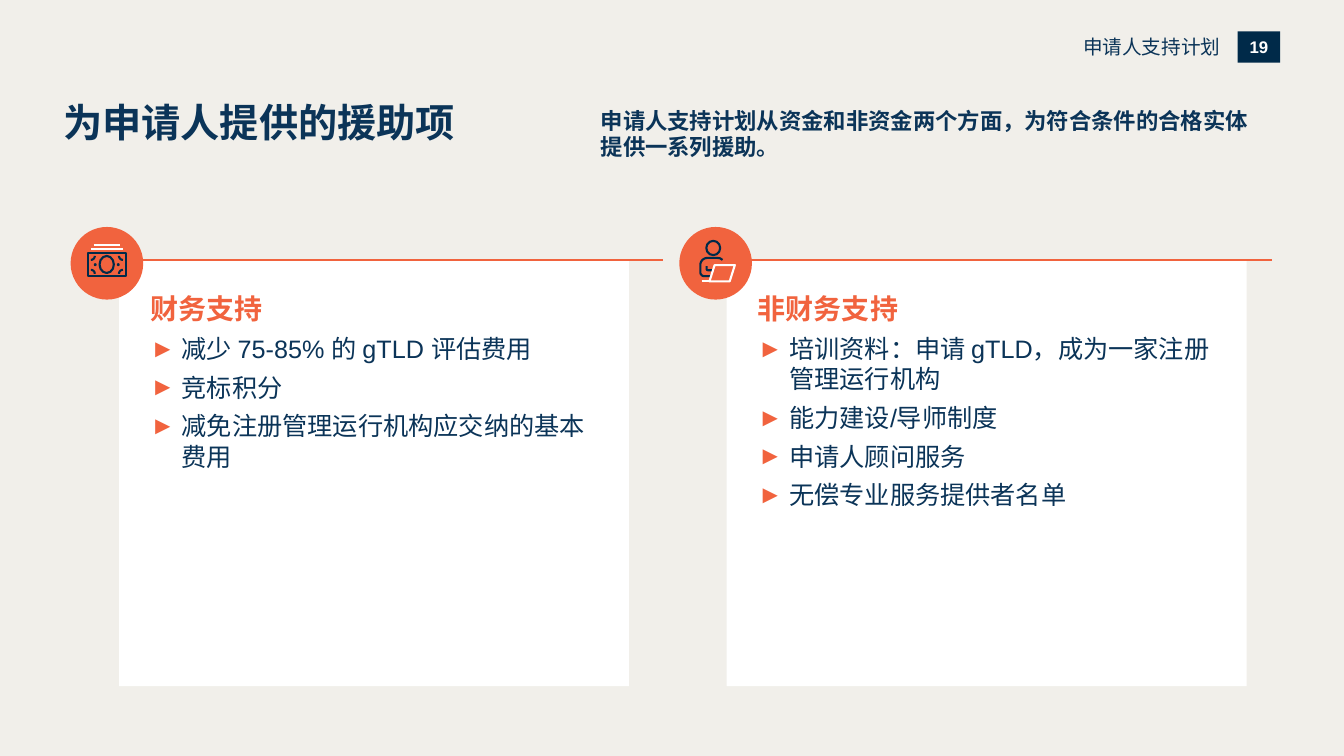
from dataclasses import dataclass
from math import cos, radians, sin

from lxml import etree
from pptx import Presentation
from pptx.dml.color import RGBColor
from pptx.enum import lang, shapes, text
from pptx.oxml import ns
from pptx.util import Cm, Pt


@dataclass(frozen=True)
class Theme:
    font: str = "Arial"
    paper: str = "F1EFEA"
    white: str = "FFFFFF"
    navy: str = "0B3458"
    dark: str = "002A49"
    orange: str = "F1633E"
    title: int = 28
    heading: int = 20
    bullet: int = 18
    lead: int = 16
    header: int = 14
    number: int = 12
    stroke: float = 1.5
    rule: float = 1.25


THEME = Theme()

# Lengths are centimetres; boxes are (left, top, width, height).
LABELS = [
    ("为申请人提供的援助项", (1.6, 2.49, 13.11, 2.34), dict(size=THEME.title, bold=True)),
    ("申请人支持计划从资金和非资金两个方面，为符合条件的合格实体提供一系列援助。",
     (15.14, 2.69, 16.74, 1.37), dict(size=THEME.lead, bold=True)),
    ("申请人支持计划", (18.49, 0.89, 12.27, 0.61),
     dict(size=THEME.header, align=text.PP_ALIGN.RIGHT)),
]
PAGE_NUMBER = ("19", (31.19, 0.79, 1.07, 0.79))
CARD_TOP, CARD_HEIGHT, CARD_INSET = 6.55, 10.74, 0.79
BADGE_TOP, BADGE_SIZE = 5.72, 1.83
CARDS = [
    dict(heading="非财务支持", left=18.31, width=13.11, right_inset=0.89,
         rule=(18.31, 32.05), badge=17.12,
         bullets=["培训资料：申请 gTLD，成为一家注册管理运行机构", "能力建设/导师制度",
                  "申请人顾问服务", "无偿专业服务提供者名单"]),
    dict(heading="财务支持", left=3.0, width=12.85, right_inset=0.61,
         rule=(2.95, 16.71), badge=1.78,
         bullets=["减少 75-85% 的 gTLD 评估费用", "竞标积分",
                  "减免注册管理运行机构应交纳的基本费用"]),
]

deck = Presentation()
deck.slide_width, deck.slide_height = Cm(33.87), Cm(19.05)
page = deck.slides.add_slide(deck.slide_layouts[6])


def color(code):
    return RGBColor.from_string(code)


def add_bullet(para):
    """Hang an orange arrowhead in front of the paragraph."""
    properties = para._p.get_or_add_pPr()
    properties.set("marL", str(Cm(0.79)))
    properties.set("indent", str(-Cm(0.89)))
    bullet_color = etree.SubElement(properties, ns.qn("a:buClr"))
    etree.SubElement(bullet_color, ns.qn("a:srgbClr"), val=THEME.orange)
    etree.SubElement(properties, ns.qn("a:buFont"), typeface=THEME.font)
    etree.SubElement(properties, ns.qn("a:buChar"), char="►")


def write(frame, words, size, ink=THEME.navy, bold=False, align=text.PP_ALIGN.LEFT,
          bullet=False, first=True):
    para = frame.paragraphs[0] if first else frame.add_paragraph()
    para.alignment = align
    if bullet:
        para.space_before = Pt(6)
        add_bullet(para)
    span = para.add_run()
    span.text = words
    span.font.name, span.font.size, span.font.bold = THEME.font, Pt(size), bold
    span.font.color.rgb = color(ink)
    span.font.language_id = lang.MSO_LANGUAGE_ID.SIMPLIFIED_CHINESE


def set_frame(box, insets=(0, 0, 0, 0), anchor=text.MSO_ANCHOR.TOP):
    frame = box.text_frame
    frame.word_wrap = True
    frame.vertical_anchor = anchor
    (frame.margin_left, frame.margin_top,
     frame.margin_right, frame.margin_bottom) = map(Cm, insets)
    return frame


def paint(shape, fill=None, line=None):
    shape.shadow.inherit = False
    if fill:
        shape.fill.solid()
        shape.fill.fore_color.rgb = color(fill)
    else:
        shape.fill.background()
    if line:
        shape.line.color.rgb = color(line)
        shape.line.width = Pt(THEME.stroke)
    else:
        shape.line.fill.background()
    return shape


def add_block(kind, box, **look):
    return paint(page.shapes.add_shape(kind, *map(Cm, box)), **look)


def add_rule(start, end, y, ink, weight):
    rule = page.shapes.add_connector(
        shapes.MSO_CONNECTOR.STRAIGHT, Cm(start), Cm(y), Cm(end), Cm(y))
    rule.line.color.rgb = color(ink)
    rule.line.width = Pt(weight)
    etree.SubElement(rule._element.spPr, ns.qn("a:effectLst"))


def add_outline(points, ink, close=False):
    points = [(Cm(x), Cm(y)) for x, y in points]
    builder = page.shapes.build_freeform(*points[0])
    builder.add_line_segments(points[1:], close=close)
    paint(builder.convert_to_shape(), line=ink)


def arc(x, y, radius, start, end, steps=8):
    """Points on a circle; angles in degrees run clockwise from the right."""
    angles = [radians(start + (end - start) * i / steps) for i in range(steps + 1)]
    return [(x + radius * cos(a), y + radius * sin(a)) for a in angles]


def draw_banknote():
    add_block(RECTANGLE, (2.21, 6.38, 0.97, 0.58), line=THEME.dark)
    add_block(OVAL, (2.51, 6.45, 0.36, 0.43), line=THEME.dark)
    for x in (2.39, 2.97):
        add_block(OVAL, (x, 6.66, 0.02, 0.02), line=THEME.dark)
    corners = [(2.29, 6.45), (3.1, 6.45), (3.1, 6.9), (2.29, 6.9)]
    for turn, (x, y) in enumerate(corners):
        add_outline(arc(x, y, 0.1, 90 * turn, 90 * turn + 90), THEME.dark)
    for start, end, y in [(2.29, 3.1, 6.27), (2.36, 3.02, 6.17)]:
        add_rule(start, end, y, THEME.white, THEME.stroke)


def draw_person_with_laptop():
    add_block(OVAL, (17.8, 6.07, 0.35, 0.36), line=THEME.dark)
    arm = [(17.81, 6.71), *arc(17.84, 6.78, 0.03, 180, 90), (17.96, 6.81)]
    body = [(18.21, 6.55), (18.15, 6.51), (18.08, 6.5), *arc(17.83, 6.68, 0.18, 270, 180),
            *arc(17.75, 6.86, 0.1, 180, 90), (17.93, 6.96)]
    laptop = [(18.01, 6.68), (18.52, 6.68), (18.39, 7.09), (17.88, 7.09)]
    add_outline(arm, THEME.dark)
    add_outline(body, THEME.dark)
    add_rule(17.68, 17.88, 7.09, THEME.white, THEME.stroke)
    add_outline(laptop, THEME.white, close=True)


def draw_card(card):
    box = (card["left"], CARD_TOP, card["width"], CARD_HEIGHT)
    frame = set_frame(add_block(RECTANGLE, box, fill=THEME.white),
                      (CARD_INSET, CARD_INSET, card["right_inset"], CARD_INSET))
    write(frame, card["heading"], THEME.heading, ink=THEME.orange, bold=True)
    for words in card["bullets"]:
        write(frame, words, THEME.bullet, bullet=True, first=False)
    add_rule(*card["rule"], CARD_TOP, THEME.orange, THEME.rule)
    add_block(OVAL, (card["badge"], BADGE_TOP, BADGE_SIZE, BADGE_SIZE), fill=THEME.orange)


RECTANGLE, OVAL = shapes.MSO_SHAPE.RECTANGLE, shapes.MSO_SHAPE.OVAL
page.background.fill.solid()
page.background.fill.fore_color.rgb = color(THEME.paper)

number, number_box = PAGE_NUMBER
tag = add_block(RECTANGLE, number_box, fill=THEME.dark)
write(set_frame(tag, anchor=text.MSO_ANCHOR.MIDDLE), number, THEME.number,
      ink=THEME.white, bold=True, align=text.PP_ALIGN.CENTER)
for card in CARDS:
    draw_card(card)
draw_person_with_laptop()
draw_banknote()
for words, box, look in LABELS:
    write(set_frame(page.shapes.add_textbox(*map(Cm, box))), words, **look)

deck.save("out.pptx")
